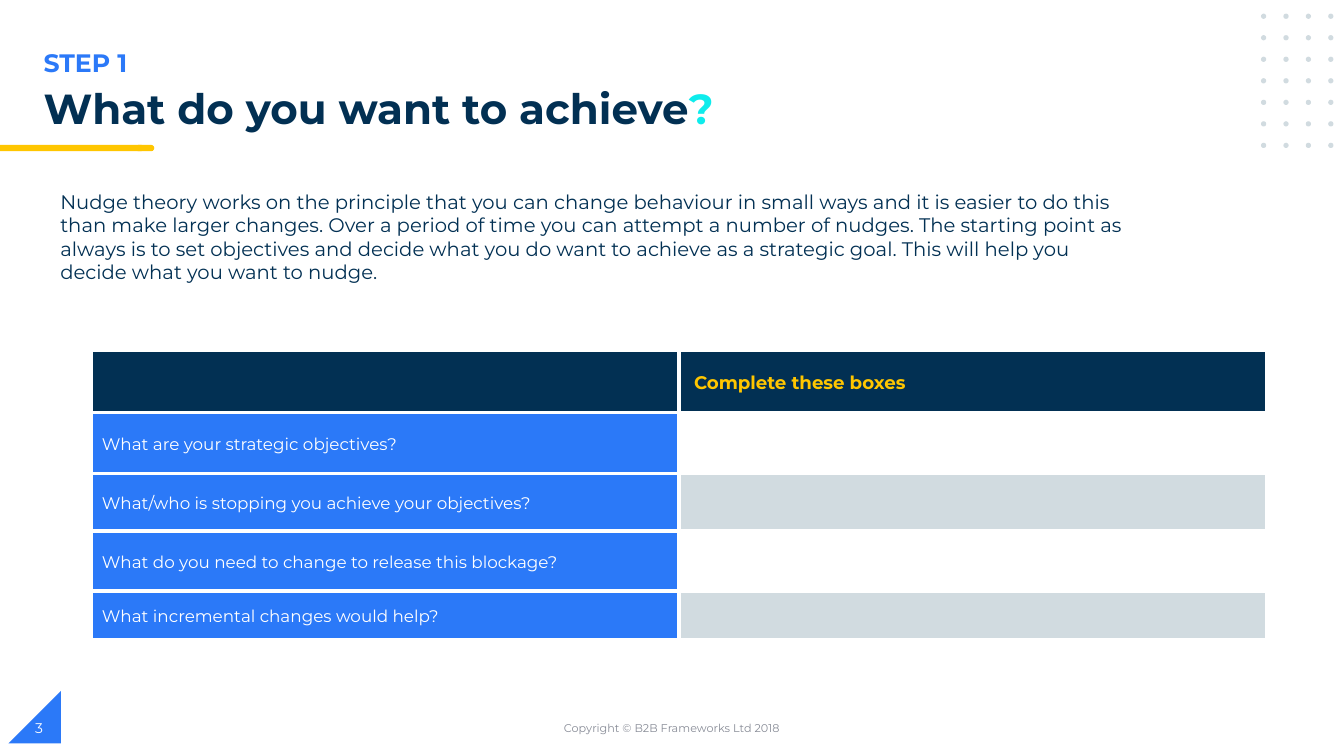
from dataclasses import dataclass

from lxml.etree import SubElement
from pptx import Presentation
from pptx.dml.color import RGBColor
from pptx.enum.shapes import MSO_SHAPE as Shape
from pptx.enum.text import MSO_ANCHOR as Anchor, PP_ALIGN as Align
from pptx.oxml.ns import qn
from pptx.util import Pt

EMU_PER_PX = 9525


@dataclass(frozen=True)
class Theme:
    font: str = "Montserrat"
    navy: str = "023053"
    blue: str = "2B79F8"
    cyan: str = "0EECEC"
    yellow: str = "FFC600"
    pale: str = "D1DBE0"
    grey: str = "888C97"
    white: str = "FFFFFF"
    title_size: int = 30
    step_size: int = 18
    body_size: int = 14
    header_size: int = 13
    cell_size: int = 12
    number_size: int = 10
    footer_size: int = 8
    border_width: int = 3


THEME = Theme()


def px(length):
    return round(length * EMU_PER_PX)


def box_px(*lengths):
    return [px(length) for length in lengths]


def set_font(font, size, color, bold=False):
    font.name = THEME.font
    font.size = Pt(size)
    font.bold = bold
    font.color.rgb = RGBColor.from_string(color)


def add_block(slide, kind, box, color):
    shape = slide.shapes.add_shape(kind, *box_px(*box))
    shape.shadow.inherit = False
    shape.fill.solid()
    shape.fill.fore_color.rgb = RGBColor.from_string(color)
    shape.line.fill.background()
    return shape


def add_text(slide, box, text, size, color, bold=False, anchor=Anchor.TOP, align=Align.LEFT):
    frame = slide.shapes.add_textbox(*box_px(*box)).text_frame
    frame.word_wrap = True
    frame.vertical_anchor = anchor
    paragraph = frame.paragraphs[0]
    paragraph.text = text
    paragraph.alignment = align
    set_font(paragraph.font, size, color, bold)
    return paragraph


def add_heading(slide, left, top, width):
    add_text(slide, (left, top, width, 38), "STEP 1", THEME.step_size, THEME.blue, bold=True)
    title = add_text(slide, (left, top + 39, width, 38), "What do you want to achieve",
                     THEME.title_size, THEME.navy, bold=True)
    title.line_spacing = 0.9
    question_mark = title.add_run()
    question_mark.text = "?"
    question_mark.font.color.rgb = RGBColor.from_string(THEME.cyan)


def add_underline(slide, left, top, width, height):
    """Bar with a rounded right end."""
    cap = 18
    add_block(slide, Shape.FLOWCHART_TERMINATOR,
              (left + width - cap, top, cap, height), THEME.yellow)
    add_block(slide, Shape.RECTANGLE, (left, top, width - cap * 2 / 3, height), THEME.yellow)


def add_dot_grid(slide, left, top, width, height, columns=4, rows=7, dot=5):
    column_step = (width - dot) / (columns - 1)
    row_step = (height - dot) / (rows - 1)
    for row in range(rows):
        for column in range(columns):
            add_block(slide, Shape.OVAL,
                      (left + column * column_step, top + row * row_step, dot, dot), THEME.pale)


def add_borders(cell):
    """White lines on all four sides; they must precede the fill in the cell."""
    properties = cell._tc.get_or_add_tcPr()
    for index, side in enumerate(("a:lnL", "a:lnR", "a:lnT", "a:lnB")):
        line = SubElement(properties, qn(side), w=str(Pt(THEME.border_width)))
        fill = SubElement(line, qn("a:solidFill"))
        SubElement(fill, qn("a:srgbClr"), val=THEME.white)
        properties.insert(index, line)


def fill_cell(cell, text, fill, size, color, bold=False, indent=10):
    cell.fill.solid()
    cell.fill.fore_color.rgb = RGBColor.from_string(fill)
    add_borders(cell)
    cell.vertical_anchor = Anchor.MIDDLE
    cell.margin_left, cell.margin_right = px(indent), px(10)
    cell.margin_top = cell.margin_bottom = 0
    paragraph = cell.text_frame.paragraphs[0]
    paragraph.text = text
    paragraph.line_spacing = 1.15
    set_font(paragraph.font, size, color, bold)


def add_question_table(slide, left, top, width):
    header_height = 60
    questions = (
        ("What are your strategic objectives?", 58),
        ("What/who is stopping you achieve your objectives?", 55),
        ("What do you need to change to release this blockage?", 57),
        ("What incremental changes would help?", 46),
    )
    height = header_height + sum(row_height for _, row_height in questions)
    table = slide.shapes.add_table(len(questions) + 1, 2,
                                   *box_px(left, top, width, height)).table
    table.horz_banding = False
    for column in table.columns:
        column.width = px(width / 2)

    table.rows[0].height = px(header_height)
    for column, label in enumerate(("", "Complete these boxes")):
        fill_cell(table.cell(0, column), label, THEME.navy, THEME.header_size,
                  THEME.yellow, bold=True, indent=14)
    for row, (question, row_height) in enumerate(questions, start=1):
        table.rows[row].height = px(row_height)
        answer_fill = THEME.white if row % 2 else THEME.pale
        fill_cell(table.cell(row, 0), question, THEME.blue, THEME.cell_size, THEME.white)
        fill_cell(table.cell(row, 1), "", answer_fill, THEME.cell_size, THEME.navy)


def add_footer(slide, left, top, width, height):
    corner = add_block(slide, Shape.RIGHT_TRIANGLE, (left + 8, top, 50, 50), THEME.blue)
    corner.rotation = 270
    text_top = top + 16
    add_text(slide, (left + 24, text_top, 288, 38), "3", THEME.number_size, THEME.white,
             anchor=Anchor.MIDDLE)
    add_text(slide, (left + (width - 432) / 2, text_top, 432, 38),
             "Copyright © B2B Frameworks Ltd 2018", THEME.footer_size, THEME.grey,
             anchor=Anchor.MIDDLE, align=Align.CENTER)


def build_step_slide(presentation):
    slide = presentation.slides.add_slide(presentation.slide_layouts[6])
    add_underline(slide, 0, 138, 147, 6)
    add_dot_grid(slide, 1201, 13, 69, 128)
    add_heading(slide, 32, 40, 745)
    add_text(slide, (48, 176, 1047, 100),
             "Nudge theory works on the principle that you can change behaviour in small ways "
             "and it is easier to do this than make larger changes. Over a period of time you "
             "can attempt a number of nudges. The starting point as always is to set objectives "
             "and decide what you do want to achieve as a strategic goal. This will help you "
             "decide what you want to nudge.", THEME.body_size, THEME.navy)
    add_question_table(slide, 87, 333, 1120)
    add_footer(slide, 0, 658, 1280, 62)


def main():
    presentation = Presentation()
    presentation.slide_width, presentation.slide_height = box_px(1280, 720)
    build_step_slide(presentation)
    presentation.save("out.pptx")


if __name__ == "__main__":
    main()
